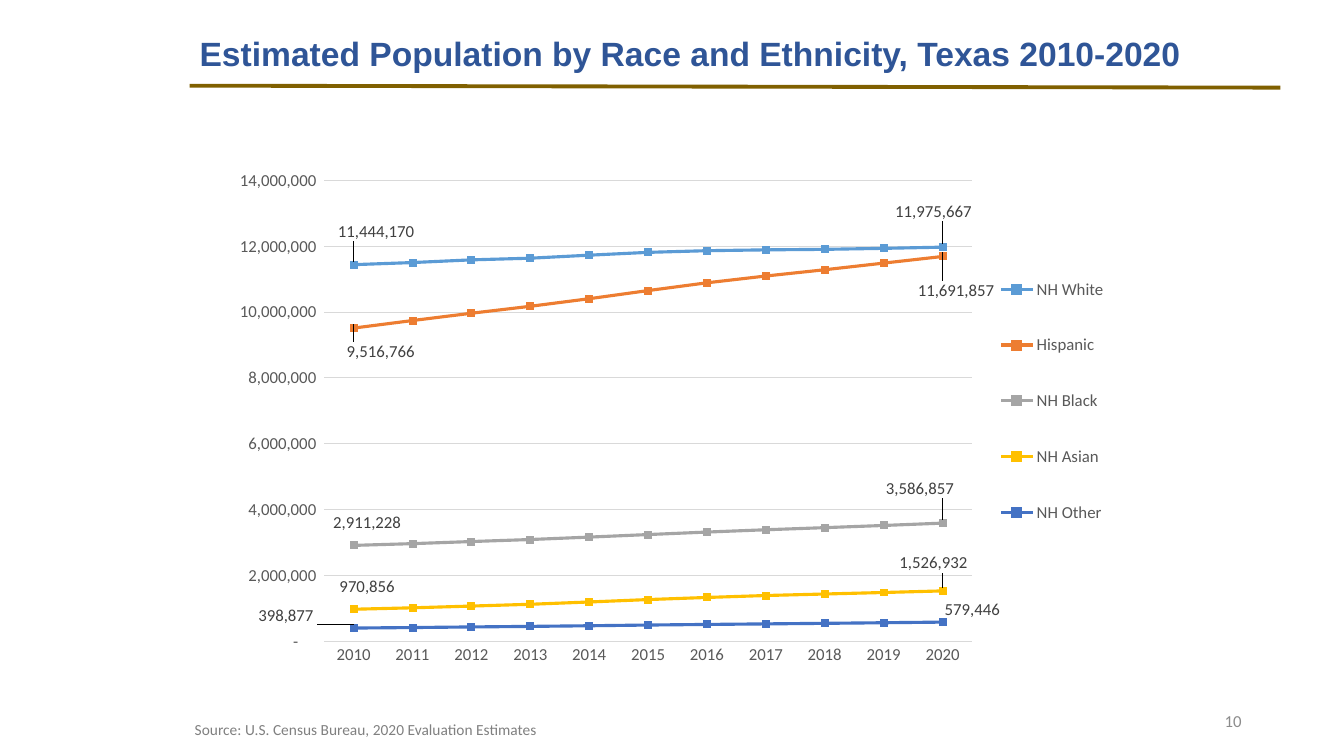
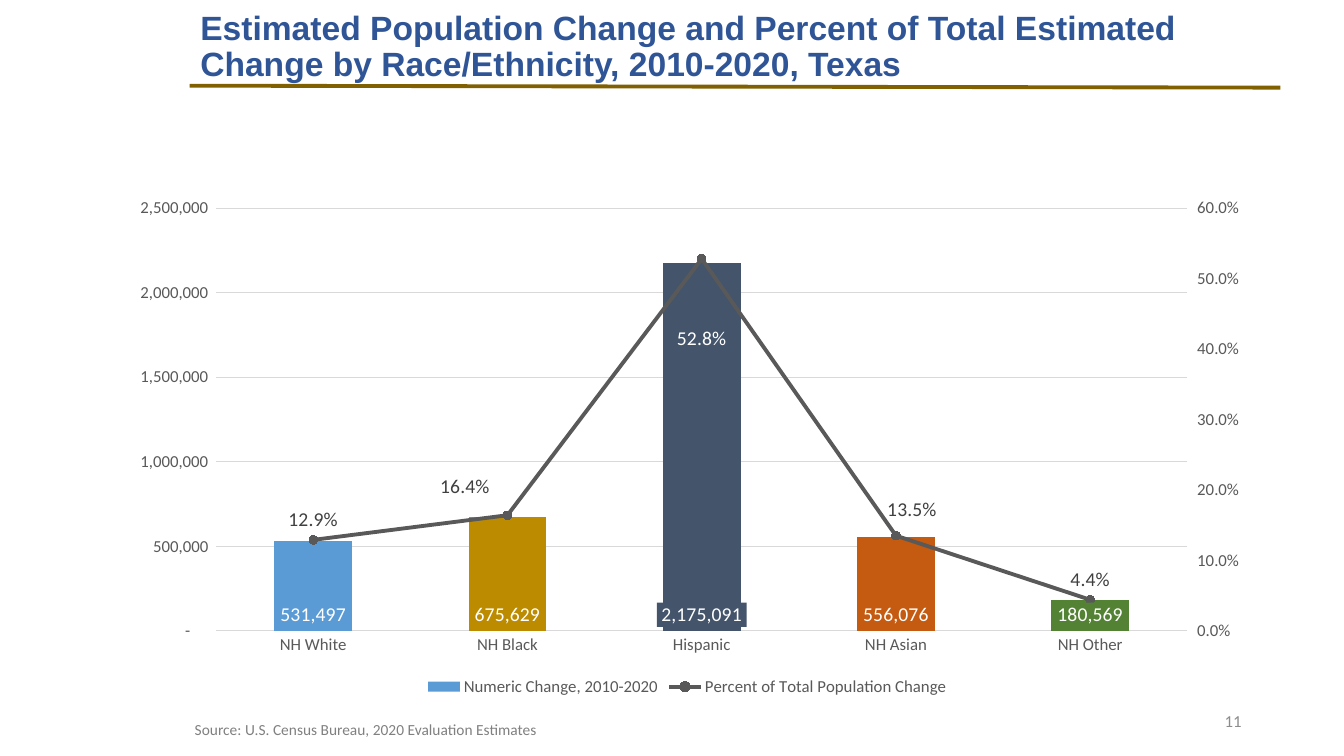
"""Build two slides on the estimated population of Texas by race and ethnicity."""
from lxml import etree
from pptx import Presentation
from pptx.chart.data import CategoryChartData
from pptx.dml.color import RGBColor
from pptx.enum.chart import XL_CHART_TYPE, XL_LABEL_POSITION, XL_LEGEND_POSITION, XL_MARKER_STYLE, XL_TICK_MARK
from pptx.enum.shapes import MSO_CONNECTOR
from pptx.enum.text import MSO_ANCHOR, PP_ALIGN
from pptx.oxml import parse_xml
from pptx.oxml.ns import nsdecls, qn
from pptx.util import Pt

LINE_MARKERS, COLUMNS = XL_CHART_TYPE.LINE_MARKERS, XL_CHART_TYPE.COLUMN_CLUSTERED
ABOVE, INSIDE_BASE = XL_LABEL_POSITION.ABOVE, XL_LABEL_POSITION.INSIDE_BASE
LEGEND_RIGHT, LEGEND_BOTTOM = XL_LEGEND_POSITION.RIGHT, XL_LEGEND_POSITION.BOTTOM
SQUARE, CIRCLE = XL_MARKER_STYLE.SQUARE, XL_MARKER_STYLE.CIRCLE
NO_TICK = XL_TICK_MARK.NONE
STRAIGHT = MSO_CONNECTOR.STRAIGHT
TOP, MIDDLE = MSO_ANCHOR.TOP, MSO_ANCHOR.MIDDLE
LEFT, RIGHT = PP_ALIGN.LEFT, PP_ALIGN.RIGHT

NAVY, GOLD, WHITE = "2F5597", "806000", "FFFFFF"
AXIS_GRAY, GRID_GRAY, LABEL_GRAY = "595959", "D9D9D9", "404040"
COUNT_FORMAT = '_(* #,##0_);_(* \\(#,##0\\);_(* "-"??_);_('
PERCENT_FORMAT = "0.0%"

LABEL_OFFSET = (
    "<c:layout %s><c:manualLayout>"
    '<c:x val="{}"/><c:y val="{}"/>'
    "</c:manualLayout></c:layout>" % nsdecls("c")
)
FIXED_AREA = (
    "<c:layout %s><c:manualLayout>{}"
    '<c:xMode val="edge"/><c:yMode val="edge"/>'
    '<c:x val="{}"/><c:y val="{}"/><c:w val="{}"/><c:h val="{}"/>'
    "</c:manualLayout></c:layout>" % nsdecls("c")
)
LABEL_FILL = (
    '<c:spPr %s><a:solidFill><a:srgbClr val="{}"/></a:solidFill></c:spPr>' % nsdecls("c", "a")
)
PERCENT_PLOT = (
    '<c:lineChart %s><c:grouping val="standard"/><c:varyColors val="0"/>'
    '<c:marker val="1"/><c:axId val="5001"/><c:axId val="5002"/></c:lineChart>' % nsdecls("c")
)
PERCENT_AXES = (
    '<c:valAx %s><c:axId val="5002"/>'
    '<c:scaling><c:orientation val="minMax"/><c:max val="0.6"/><c:min val="0"/></c:scaling>'
    '<c:delete val="0"/><c:axPos val="r"/><c:numFmt formatCode="0.0%%" sourceLinked="0"/>'
    '<c:majorTickMark val="out"/><c:minorTickMark val="none"/><c:tickLblPos val="nextTo"/>'
    "<c:spPr><a:ln><a:noFill/></a:ln></c:spPr>"
    '<c:crossAx val="5001"/><c:crosses val="max"/><c:majorUnit val="0.1"/></c:valAx>' % nsdecls("c", "a"),
    '<c:catAx %s><c:axId val="5001"/>'
    '<c:scaling><c:orientation val="minMax"/></c:scaling>'
    '<c:delete val="1"/><c:axPos val="b"/><c:crossAx val="5002"/></c:catAx>' % nsdecls("c"),
)


def rgb(value):
    return RGBColor.from_string(value)


def add_text(slide, text, left, top, width, height, size, color, font="Calibri", bold=False,
             align=LEFT, anchor=MIDDLE, spacing=1.0, wrap=True):
    frame = slide.shapes.add_textbox(Pt(left), Pt(top), Pt(width), Pt(height)).text_frame
    frame.word_wrap = wrap
    frame.vertical_anchor = anchor
    paragraph = frame.paragraphs[0]
    paragraph.text = text
    paragraph.alignment = align
    paragraph.line_spacing = spacing
    paragraph.font.name = font
    paragraph.font.size = Pt(size)
    paragraph.font.bold = bold
    paragraph.font.color.rgb = rgb(color)


prs = Presentation()
prs.slide_width, prs.slide_height = Pt(960), Pt(540)

trend = CategoryChartData(number_format=COUNT_FORMAT)
trend.categories = [str(year) for year in range(2010, 2021)]
groups = [
    ("NH White", "5B9BD5", {0: (0.025, -0.03), 10: (-0.01, -0.035)},
     [11444170, 11507641, 11590061, 11640809, 11731441, 11817644, 11868490, 11893450, 11909791, 11939907, 11975667]),
    ("Hispanic", "ED7D31", {0: (0.03, 0.08), 10: (0.015, 0.1)},
     [9516766, 9745016, 9967548, 10178631, 10409360, 10656323, 10892261, 11098277, 11289269, 11491337, 11691857]),
    ("NH Black", "A5A5A5", {0: (0.015, -0.01), 10: (-0.025, -0.033)},
     [2911228, 2963959, 3027689, 3089594, 3162314, 3240502, 3315481, 3385656, 3449719, 3515891, 3586857]),
    ("NH Asian", "FFC000", {0: (0.015, -0.01), 10: (-0.01, -0.02)},
     [970856, 1014049, 1066401, 1121347, 1191218, 1264314, 1328880, 1387899, 1433533, 1479733, 1526932]),
    ("NH Other", "4472C4", {0: (-0.075, 0.01), 10: (0.033, 0.01)},
     [398877, 414839, 432421, 449265, 468759, 489748, 508952, 525742, 542252, 559926, 579446]),
]
for name, color, offsets, counts in groups:
    trend.add_series(name, counts)

change = CategoryChartData(number_format=COUNT_FORMAT)
change.categories = ["NH White", "NH Black", "Hispanic", "NH Asian", "NH Other"]
change.add_series("Numeric Change, 2010-2020", [531497, 675629, 2175091, 556076, 180569])
change.add_series("Percent of Total Population Change", [0.129, 0.164, 0.528, 0.135, 0.044], PERCENT_FORMAT)
change_colors = ["5B9BD5", "BC8B00", "44546A", "C55A11", "548235"]
percent_offsets = {0: (0, 0), 1: (-0.037, -0.016), 2: (0, 0.195), 3: (0.014, -0.012), 4: (0, 0)}

pages = [
    ("10", "Estimated Population by Race and Ethnicity, Texas 2010-2020", (135.5, 17.5, 775.5, 44),
     LINE_MARKERS, trend, (155.5, 115, 644.5, 368.5), (0.118, 0.038, 0.718, 0.893),
     14000000, 2000000, LEGEND_RIGHT),
    ("11", "Estimated Population Change and Percent of Total Estimated Change by Race/Ethnicity, 2010-2020, Texas",
     (136, 8.5, 780.5, 51),
     COLUMNS, change, (80.5, 134, 821, 366.5), (0.09, 0.04, 0.845, 0.824),
     2500000, 500000, LEGEND_BOTTOM),
]
charts = []
for number, title, title_box, kind, data, chart_box, plot_box, top_value, step, legend_side in pages:
    slide = prs.slides.add_slide(prs.slide_layouts[6])
    rule = slide.shapes.add_connector(STRAIGHT, Pt(135.5), Pt(61.2), Pt(914.5), Pt(62.6))
    rule.line.color.rgb = rgb(GOLD)
    rule.line.width = Pt(2.75)
    etree.SubElement(rule._element.spPr, qn("a:effectLst"))
    add_text(slide, number, 678, 500.5, 216, 29, size=12, color="8C8C8C", align=RIGHT)

    chart = slide.shapes.add_chart(kind, *[Pt(length) for length in chart_box], data).chart
    chart.has_title = False
    chart.font.name = "Calibri"
    chart.font.size = Pt(12)
    chart.font.color.rgb = rgb(AXIS_GRAY)
    chart.plots[0].vary_by_categories = False

    years_or_groups, people = chart.category_axis, chart.value_axis
    years_or_groups.major_tick_mark = people.major_tick_mark = NO_TICK
    years_or_groups.format.line.color.rgb = rgb(GRID_GRAY)
    years_or_groups.format.line.width = Pt(0.75)
    people.minimum_scale, people.maximum_scale, people.major_unit = 0, top_value, step
    people.format.line.fill.background()
    people.major_gridlines.format.line.color.rgb = rgb(GRID_GRAY)
    people.major_gridlines.format.line.width = Pt(0.75)
    people.tick_labels.number_format = COUNT_FORMAT
    people.tick_labels.number_format_is_linked = False

    chart.has_legend = True
    chart.legend.position = legend_side
    chart.legend.include_in_layout = False
    plot_area = chart._chartSpace.find(".//" + qn("c:plotArea"))
    for automatic in plot_area.findall(qn("c:layout")):
        plot_area.remove(automatic)
    plot_area.insert(0, parse_xml(FIXED_AREA.format('<c:layoutTarget val="inner"/>', *plot_box)))
    charts.append(chart)

    add_text(slide, title, *title_box, size=24, color=NAVY, font="Arial", bold=True, spacing=0.9)
    add_text(slide, "Source: U.S. Census Bureau, 2020 Evaluation Estimates", 132, 511, 267, 21,
             size=11, color="808080", anchor=TOP, wrap=False)

trend_chart, change_chart = charts

legend = trend_chart.legend._element
for automatic in legend.findall(qn("c:layout")):
    legend.remove(automatic)
legend_area = parse_xml(FIXED_AREA.format("", 0.86, 0.16, 0.13, 0.61))
legend.insert(len(legend.findall(qn("c:legendPos"))), legend_area)

plot_area = change_chart._chartSpace.find(".//" + qn("c:plotArea"))
columns = plot_area.find(qn("c:barChart"))
percent_series = columns.findall(qn("c:ser"))[1]
for bar_only in percent_series.findall(qn("c:invertIfNegative")):
    percent_series.remove(bar_only)
percent_plot = parse_xml(PERCENT_PLOT)
percent_plot.insert(2, percent_series)
columns.addnext(percent_plot)
last_axis = plot_area.findall(qn("c:valAx"))[-1]
for axis in reversed(PERCENT_AXES):
    last_axis.addnext(parse_xml(axis))

change_chart.plots[0].gap_width = 150
numeric_change = change_chart.plots[0].series[0]
numeric_change.format.fill.solid()
numeric_change.format.fill.fore_color.rgb = rgb(change_colors[0])
for index, color in enumerate(change_colors):
    point = numeric_change.points[index]
    point.format.fill.solid()
    point.format.fill.fore_color.rgb = rgb(color)
    label = point.data_label
    label.position = INSIDE_BASE
    label.font.size = Pt(14)
    label.font.color.rgb = rgb(WHITE)
    entry = numeric_change.data_labels._element.findall(qn("c:dLbl"))[index]
    for plain in entry.findall(qn("c:spPr")):
        entry.remove(plain)
    entry.find(qn("c:txPr")).addprevious(parse_xml(LABEL_FILL.format(color)))

lines = [
    (series, color, 2.25, SQUARE, 5, 12, offsets, True)
    for series, (name, color, offsets, counts) in zip(trend_chart.plots[0].series, groups)
]
lines.append((change_chart.plots[1].series[0], AXIS_GRAY, 2.75, CIRCLE, 6, 14, percent_offsets, False))
for series, color, width, marker, marker_size, label_size, offsets, leaders in lines:
    series.smooth = False
    series.format.line.color.rgb = rgb(color)
    series.format.line.width = Pt(width)
    series.marker.style = marker
    series.marker.size = marker_size
    series.marker.format.fill.solid()
    series.marker.format.fill.fore_color.rgb = rgb(color)
    series.marker.format.line.color.rgb = rgb(color)
    labels = series.data_labels
    labels.show_value = False
    for default in labels._element.findall(qn("c:showLeaderLines")):
        labels._element.remove(default)
    etree.SubElement(labels._element, qn("c:showLeaderLines")).set("val", str(int(leaders)))
    for index, offset in offsets.items():
        label = series.points[index].data_label
        label.position = ABOVE
        label.font.size = Pt(label_size)
        on_dark_column = not leaders and index == 2
        label.font.color.rgb = rgb(WHITE if on_dark_column else LABEL_GRAY)
        entry = labels._element.findall(qn("c:dLbl"))[-1]
        entry.find(qn("c:idx")).addnext(parse_xml(LABEL_OFFSET.format(*offset)))

prs.save("out.pptx")
